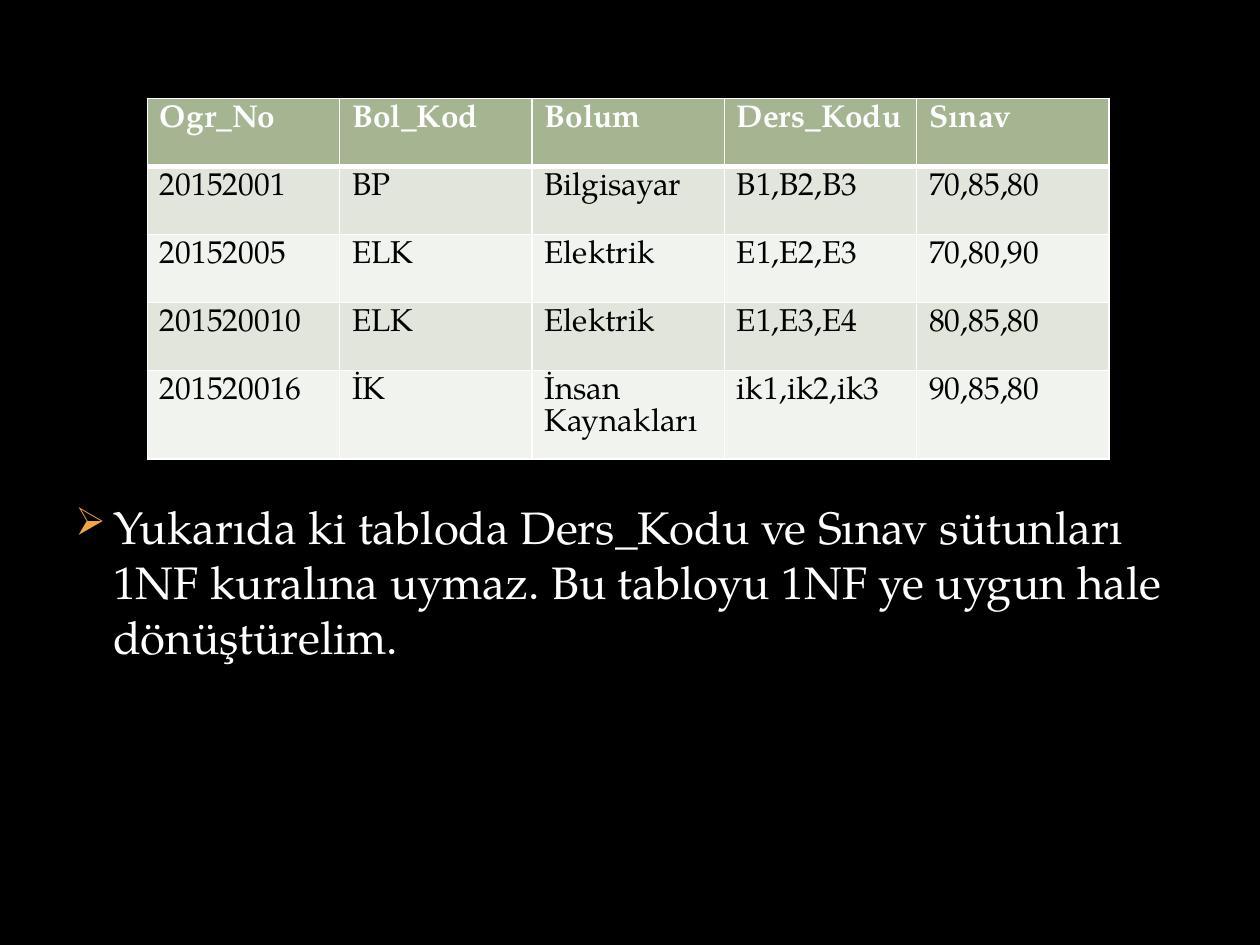
from dataclasses import dataclass

from lxml.etree import SubElement
from pptx import Presentation
from pptx.dml.color import RGBColor as Rgb
from pptx.oxml.ns import qn
from pptx.util import Pt


@dataclass(frozen=True)
class Theme:
    """Colours, font and type sizes of the slide."""
    font: str = "TeX Gyre Pagella"
    background: str = "000000"
    light: str = "FFFFFF"
    dark: str = "000000"
    header: str = "A5B592"
    bands: tuple = ("E1E5DC", "F0F3EE")
    bullet: str = "F3A447"
    table_size: float = 18
    body_size: float = 26
    body_leading: float = 31.4


THEME = Theme()
RECORDS = [
    ("Ogr_No", "Bol_Kod", "Bolum", "Ders_Kodu", "Sınav"),
    ("20152001", "BP", "Bilgisayar", "B1,B2,B3", "70,85,80"),
    ("20152005", "ELK", "Elektrik", "E1,E2,E3", "70,80,90"),
    ("201520010", "ELK", "Elektrik", "E1,E3,E4", "80,85,80"),
    ("201520016", "İK", "İnsan Kaynakları", "ik1,ik2,ik3", "90,85,80"),
]
REMARK = ("Yukarıda ki tabloda Ders_Kodu ve Sınav sütunları 1NF kuralına uymaz. "
          "Bu tabloyu 1NF ye uygun hale dönüştürelim.")


def write(frame, text, *, size, color, bold=False, leading=None):
    """Write text into a frame's first paragraph and return that paragraph."""
    paragraph = frame.paragraphs[0]
    run = paragraph.add_run()
    run.text = text
    run.font.name = THEME.font
    run.font.size = Pt(size)
    run.font.bold = bold
    run.font.color.rgb = Rgb.from_string(color)
    if leading:
        paragraph.line_spacing = Pt(leading)
    return paragraph


def add_bullet(paragraph, mark, indent):
    """Give a paragraph a hanging, coloured bullet."""
    properties = paragraph._p.get_or_add_pPr()
    properties.set("marL", str(Pt(indent)))
    properties.set("indent", str(-Pt(indent)))
    tint = SubElement(properties, qn("a:buClr"))
    SubElement(tint, qn("a:srgbClr"), val=THEME.bullet)
    SubElement(properties, qn("a:buSzPct"), val="85000")
    SubElement(properties, qn("a:buChar"), char=mark)


def set_borders(cell, top=1, bottom=1):
    """Draw light borders around a cell."""
    properties = cell._tc.get_or_add_tcPr()
    for side, width in (("L", 1), ("R", 1), ("T", top), ("B", bottom)):
        line = SubElement(properties, qn(f"a:ln{side}"), w=str(Pt(width)))
        fill = SubElement(line, qn("a:solidFill"))
        SubElement(fill, qn("a:srgbClr"), val=THEME.light)


def add_records(slide, left, top, column_width, row_height):
    """Add the student table with a header and banded rows."""
    rows, columns = len(RECORDS), len(RECORDS[0])
    table = slide.shapes.add_table(
        rows, columns, Pt(left), Pt(top),
        Pt(column_width * columns), Pt(row_height * rows)).table
    for column in table.columns:
        column.width = Pt(column_width)
    for r, record in enumerate(RECORDS):
        table.rows[r].height = Pt(row_height)
        is_header = r == 0
        shade = THEME.header if is_header else THEME.bands[(r - 1) % 2]
        for c, value in enumerate(record):
            cell = table.cell(r, c)
            set_borders(cell, top=3 if r == 1 else 1, bottom=3 if is_header else 1)
            cell.fill.solid()
            cell.fill.fore_color.rgb = Rgb.from_string(shade)
            write(cell.text_frame, value, size=THEME.table_size, bold=is_header,
                  color=THEME.light if is_header else THEME.dark)


def add_remark(slide, left, top, width, height):
    """Add the bulleted remark below the table."""
    frame = slide.shapes.add_textbox(Pt(left), Pt(top), Pt(width), Pt(height)).text_frame
    frame.word_wrap = True
    remark = write(frame, REMARK, size=THEME.body_size, color=THEME.light,
                   leading=THEME.body_leading)
    add_bullet(remark, "➢", indent=21.6)


def main():
    """Build and save the slide."""
    deck = Presentation()
    deck.slide_width, deck.slide_height = Pt(720), Pt(540)
    slide = deck.slides.add_slide(deck.slide_layouts[6])
    slide.background.fill.solid()
    slide.background.fill.fore_color.rgb = Rgb.from_string(THEME.background)
    add_remark(slide, left=36, top=281.2, width=648, height=199)
    add_records(slide, left=84.2, top=56.2, column_width=109.9, row_height=38.9)
    deck.save("out.pptx")


if __name__ == "__main__":
    main()
